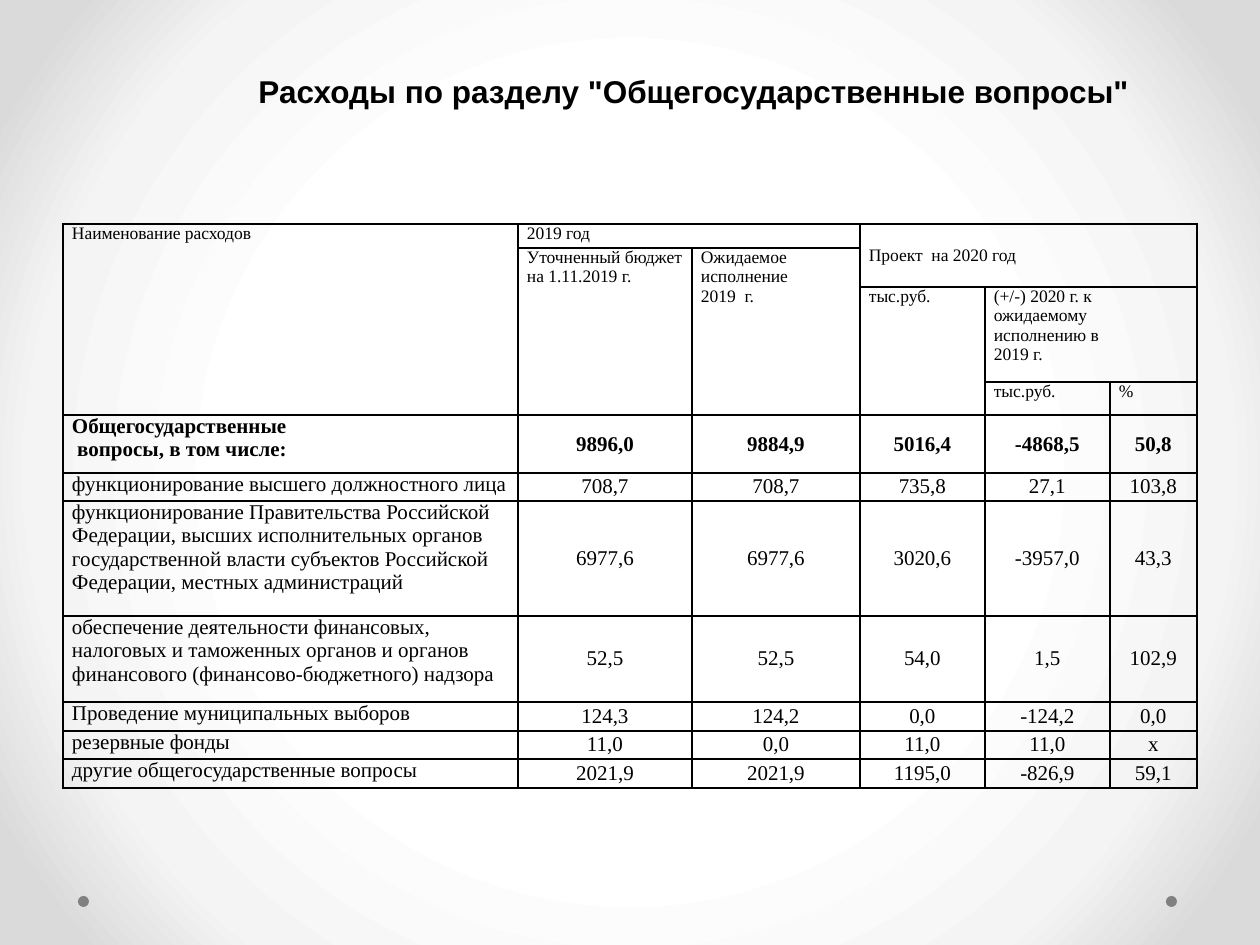
import pptx
import pptx.dml.color
import pptx.enum.shapes
import pptx.enum.text
import pptx.oxml
import pptx.oxml.ns
import pptx.util

PX_PER_INCH = 126
NAMESPACES = pptx.oxml.ns.nsdecls("a", "p")
ALIGN = pptx.enum.text.PP_ALIGN
ANCHOR = pptx.enum.text.MSO_ANCHOR

COLUMNS = [455, 174, 168, 125, 125, 87]
ROWS = [24, 39, 95, 33, 58, 28, 115, 86, 29, 28, 29]
INSET = 9

# row, column, rows spanned, columns spanned, text, anchor, right inset
HEADERS = [
    (0, 0, 4, 1, "Наименование расходов", ANCHOR.TOP, INSET),
    (0, 1, 1, 2, "2019 год", ANCHOR.TOP, INSET),
    (0, 3, 2, 3, "Проект  на 2020 год", ANCHOR.MIDDLE, INSET),
    (1, 1, 3, 1, "Уточненный бюджет на 1.11.2019 г.", ANCHOR.TOP, INSET),
    (1, 2, 3, 1, "Ожидаемое\nисполнение\n2019  г.", ANCHOR.TOP, INSET),
    (2, 3, 2, 1, "тыс.руб.", ANCHOR.TOP, INSET),
    (2, 4, 1, 2, "(+/-) 2020 г. к ожидаемому\nисполнению в\n2019 г.", ANCHOR.TOP, 40),
    (3, 4, 1, 1, "тыс.руб.", ANCHOR.TOP, INSET),
    (3, 5, 1, 1, "%", ANCHOR.TOP, INSET),
]
FIRST_EXPENSE_ROW = 4
EXPENSES = [
    ("Общегосударственные\n вопросы, в том числе:", "9896,0", "9884,9", "5016,4", "-4868,5", "50,8"),
    ("функционирование высшего должностного лица", "708,7", "708,7", "735,8", "27,1", "103,8"),
    ("функционирование Правительства Российской Федерации, высших исполнительных органов "
     "государственной власти субъектов Российской Федерации, местных администраций",
     "6977,6", "6977,6", "3020,6", "-3957,0", "43,3"),
    ("обеспечение деятельности финансовых, налоговых и таможенных органов и органов "
     "финансового (финансово-бюджетного) надзора", "52,5", "52,5", "54,0", "1,5", "102,9"),
    ("Проведение муниципальных выборов", "124,3", "124,2", "0,0", "-124,2", "0,0"),
    ("резервные фонды", "11,0", "0,0", "11,0", "11,0", "х"),
    ("другие общегосударственные вопросы", "2021,9", "2021,9", "1195,0", "-826,9", "59,1"),
]


def px(length):
    return pptx.util.Emu(round(length * 914400 / PX_PER_INCH))


def color(value):
    return pptx.dml.color.RGBColor.from_string(value)


def write(frame, text, align, **font_format):
    for index, line in enumerate(text.split("\n")):
        para = frame.add_paragraph() if index else frame.paragraphs[0]
        para.alignment = align
        span = para.add_run()
        span.text = line
        span.font.color.rgb = color("000000")
        for name, value in font_format.items():
            setattr(span.font, name, value)


def paint_background(page):
    stops = "".join(
        f'<a:gs pos="{percent * 1000}"><a:srgbClr val="{value}"/></a:gs>'
        for percent, value in [(50, "FFFFFF"), (76, "F4F4F4"), (92, "DADADA")])
    background = pptx.oxml.parse_xml(
        f'<p:bg {NAMESPACES}><p:bgPr><a:gradFill rotWithShape="1"><a:gsLst>{stops}</a:gsLst>'
        '<a:path path="circle"><a:fillToRect l="50000" t="50000" r="50000" b="50000"/></a:path>'
        '</a:gradFill><a:effectLst/></p:bgPr></p:bg>')
    page.shapes._spTree.addprevious(background)


def add_dots(page, left, top, width, size):
    """Place one dot at each end of the given strip."""
    for dot_left in (left, left + width - size):
        dot = page.shapes.add_shape(pptx.enum.shapes.MSO_SHAPE.OVAL,
                                    px(dot_left), px(top), px(size), px(size))
        dot.shadow.inherit = False
        dot.fill.solid()
        dot.fill.fore_color.rgb = color("808080")
        dot.line.fill.background()


def place_title(page, left, top, width, height):
    title = page.shapes.title
    title.left, title.top, title.width, title.height = map(px, (left, top, width, height))
    frame = title.text_frame
    frame_format = {"word_wrap": True, "auto_size": pptx.enum.text.MSO_AUTO_SIZE.NONE,
                    "vertical_anchor": ANCHOR.BOTTOM, "margin_left": px(138)}
    for name, value in frame_format.items():
        setattr(frame, name, value)
    write(frame, 'Расходы по разделу "Общегосударственные вопросы"', ALIGN.CENTER,
          name="Arial", size=pptx.util.Pt(18), bold=True)


def outline(cell):
    """Give a cell black borders, no fill and tight insets."""
    properties = cell._tc.get_or_add_tcPr()
    for side in ("lnL", "lnR", "lnT", "lnB"):
        properties.append(pptx.oxml.parse_xml(
            f'<a:{side} {NAMESPACES} w="12700"><a:solidFill><a:srgbClr val="000000"/>'
            f'</a:solidFill></a:{side}>'))
    cell.fill.background()
    cell.margin_left = cell.margin_right = px(INSET)
    cell.margin_top = cell.margin_bottom = 0


def fill_headers(table):
    for row, column, row_span, column_span, text, anchor, right_inset in HEADERS:
        cell = table.cell(row, column)
        if row_span * column_span > 1:
            cell.merge(table.cell(row + row_span - 1, column + column_span - 1))
        cell.vertical_anchor = anchor
        cell.margin_right = px(right_inset)
        write(cell.text_frame, text, ALIGN.LEFT,
              name="Times New Roman", size=pptx.util.Pt(10), bold=False)


def fill_expenses(table):
    for row, values in enumerate(EXPENSES, FIRST_EXPENSE_ROW):
        for column, text in enumerate(values):
            cell = table.cell(row, column)
            cell.vertical_anchor = ANCHOR.MIDDLE if column else ANCHOR.TOP
            write(cell.text_frame, text, ALIGN.CENTER if column else ALIGN.LEFT,
                  name="Times New Roman", size=pptx.util.Pt(12),
                  bold=row == FIRST_EXPENSE_ROW)


def add_expense_table(page, left, top):
    table = page.shapes.add_table(len(ROWS), len(COLUMNS), px(left), px(top),
                                  px(sum(COLUMNS)), px(sum(ROWS))).table
    table.first_row = table.horz_banding = False
    for column, width in zip(table.columns, COLUMNS):
        column.width = px(width)
    for row, height in zip(table.rows, ROWS):
        row.height = px(height)
    for cell in table.iter_cells():
        outline(cell)
    fill_headers(table)
    fill_expenses(table)


def main():
    deck = pptx.Presentation()
    deck.slide_width, deck.slide_height = px(1260), px(945)
    page = deck.slides.add_slide(deck.slide_layouts.get_by_name("Title Only"))
    paint_background(page)
    add_dots(page, 78, 896, 1099, 11)
    place_title(page, 64, 37, 1134, 79)
    add_expense_table(page, 63, 224)
    deck.save("out.pptx")


if __name__ == "__main__":
    main()
